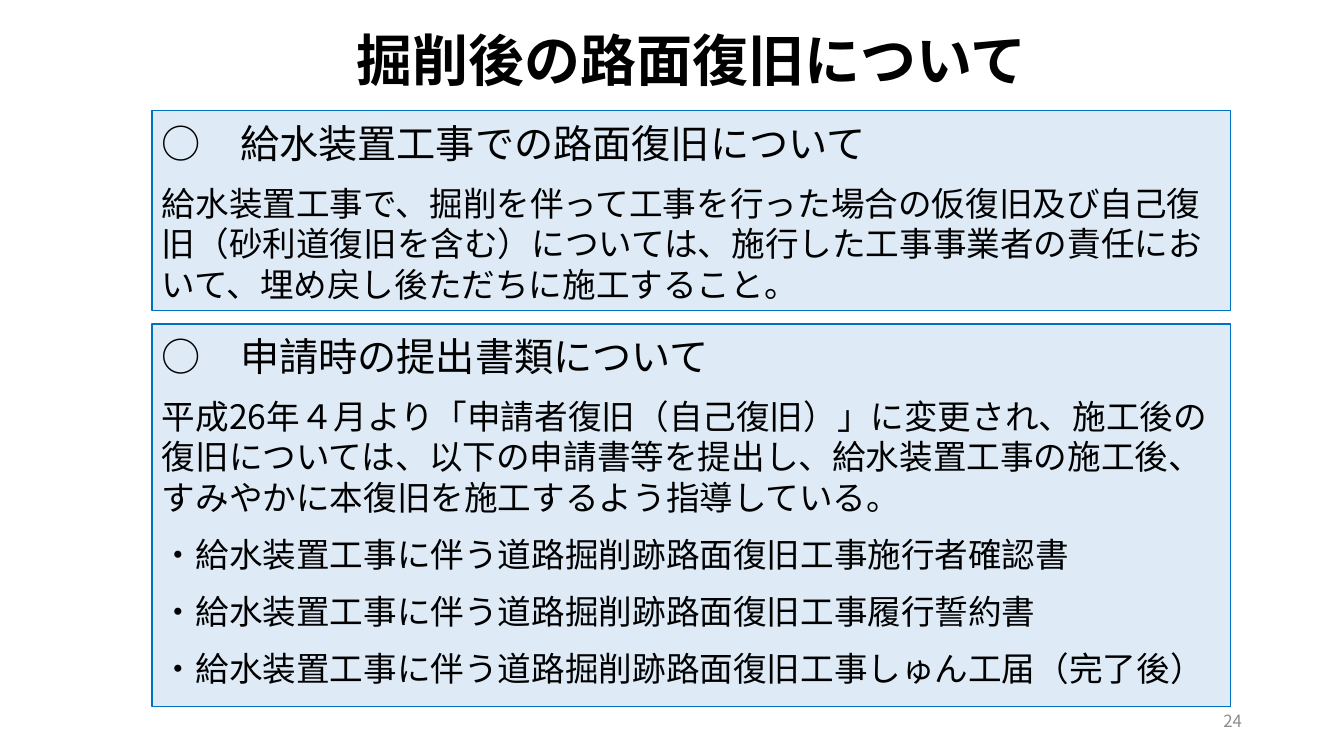
from dataclasses import dataclass

from lxml.etree import SubElement
from pptx import Presentation
from pptx.dml.color import RGBColor
from pptx.enum.shapes import MSO_SHAPE
from pptx.enum.text import MSO_ANCHOR, MSO_AUTO_SIZE, PP_ALIGN
from pptx.oxml.ns import qn
from pptx.slide import Slide
from pptx.text.text import TextFrame, _Paragraph
from pptx.util import Emu, Pt

PX_PER_INCH = 100.8
FONT = "Noto Sans CJK JP"
COLORS = {"text": "000000", "panel": "DEEBF7", "border": "0070C0", "number": "8C8C8C"}
HEADING_SIZE, BODY_SIZE = 28, 24
PANEL_LEFT, PANEL_WIDTH = 152, 1079


@dataclass
class Panel:
    top: int
    height: int
    heading: str
    body: list[str]


PANELS = [
    Panel(111, 200, "○　給水装置工事での路面復旧について", [
        "給水装置工事で、掘削を伴って工事を行った場合の仮復旧及び自己復旧（砂利道復旧を含む）"
        "については、施行した工事事業者の責任において、埋め戻し後ただちに施工すること。",
    ]),
    Panel(324, 383, "○　申請時の提出書類について", [
        "平成26年４月より「申請者復旧（自己復旧）」に変更され、施工後の復旧については、"
        "以下の申請書等を提出し、給水装置工事の施工後、すみやかに本復旧を施工するよう指導している。",
        "・給水装置工事に伴う道路掘削跡路面復旧工事施行者確認書",
        "・給水装置工事に伴う道路掘削跡路面復旧工事履行誓約書",
        "・給水装置工事に伴う道路掘削跡路面復旧工事しゅん工届（完了後）",
    ]),
]


def px(n: int) -> Emu:
    return Emu(round(n * 914400 / PX_PER_INCH))


def rgb(name: str) -> RGBColor:
    return RGBColor.from_string(COLORS[name])


def set_frame(tf: TextFrame, anchor: MSO_ANCHOR, top_inset: int) -> None:
    tf.word_wrap = True
    tf.auto_size = MSO_AUTO_SIZE.NONE
    tf.vertical_anchor = anchor
    tf.margin_left = tf.margin_right = px(10)
    tf.margin_top, tf.margin_bottom = px(top_inset), px(5)


def format_paragraph(p: _Paragraph, size: int, align: PP_ALIGN, color: str = "text",
                     latin: str = FONT, bold: bool = False) -> None:
    p.alignment = align
    p.line_spacing = Pt(size * 1.2)
    for r in p.runs:
        r.font.size = Pt(size)
        r.font.bold = bold
        r.font.color.rgb = rgb(color)
        r.font.name = latin
        SubElement(r.font._element, qn("a:ea")).set("typeface", FONT)


def add_title(s: Slide, text: str) -> None:
    sp = s.shapes.title
    sp.left, sp.top, sp.width, sp.height = px(196), px(15), px(991), px(76)
    tf = sp.text_frame
    tf.text = text
    set_frame(tf, MSO_ANCHOR.TOP, 11)
    format_paragraph(tf.paragraphs[0], 40, PP_ALIGN.CENTER, latin="Calibri", bold=True)


def add_panel(s: Slide, panel: Panel) -> None:
    sp = s.shapes.add_shape(MSO_SHAPE.RECTANGLE, px(PANEL_LEFT), px(panel.top),
                            px(PANEL_WIDTH), px(panel.height))
    sp.shadow.inherit = False
    sp.fill.solid()
    sp.fill.fore_color.rgb = rgb("panel")
    sp.line.color.rgb = rgb("border")
    sp.line.width = Pt(0.75)
    tf = sp.text_frame
    set_frame(tf, MSO_ANCHOR.TOP, 8)
    tf.text = "\n".join([panel.heading, *panel.body])
    for i, p in enumerate(tf.paragraphs):
        size = BODY_SIZE if i else HEADING_SIZE
        format_paragraph(p, size, PP_ALIGN.LEFT)
        if i:
            p.space_before = Pt(size / 2)


def add_page_number(s: Slide, number: str) -> None:
    tf = s.shapes.add_textbox(px(950), px(701), px(302), px(40)).text_frame
    tf.text = number
    set_frame(tf, MSO_ANCHOR.MIDDLE, 5)
    format_paragraph(tf.paragraphs[0], 12, PP_ALIGN.RIGHT, color="number")


def main() -> None:
    prs = Presentation()
    prs.slide_width, prs.slide_height = px(1344), px(756)
    s = prs.slides.add_slide(prs.slide_layouts[5])
    add_title(s, "掘削後の路面復旧について")
    for panel in PANELS:
        add_panel(s, panel)
    add_page_number(s, "24")
    prs.save("out.pptx")


if __name__ == "__main__":
    main()
